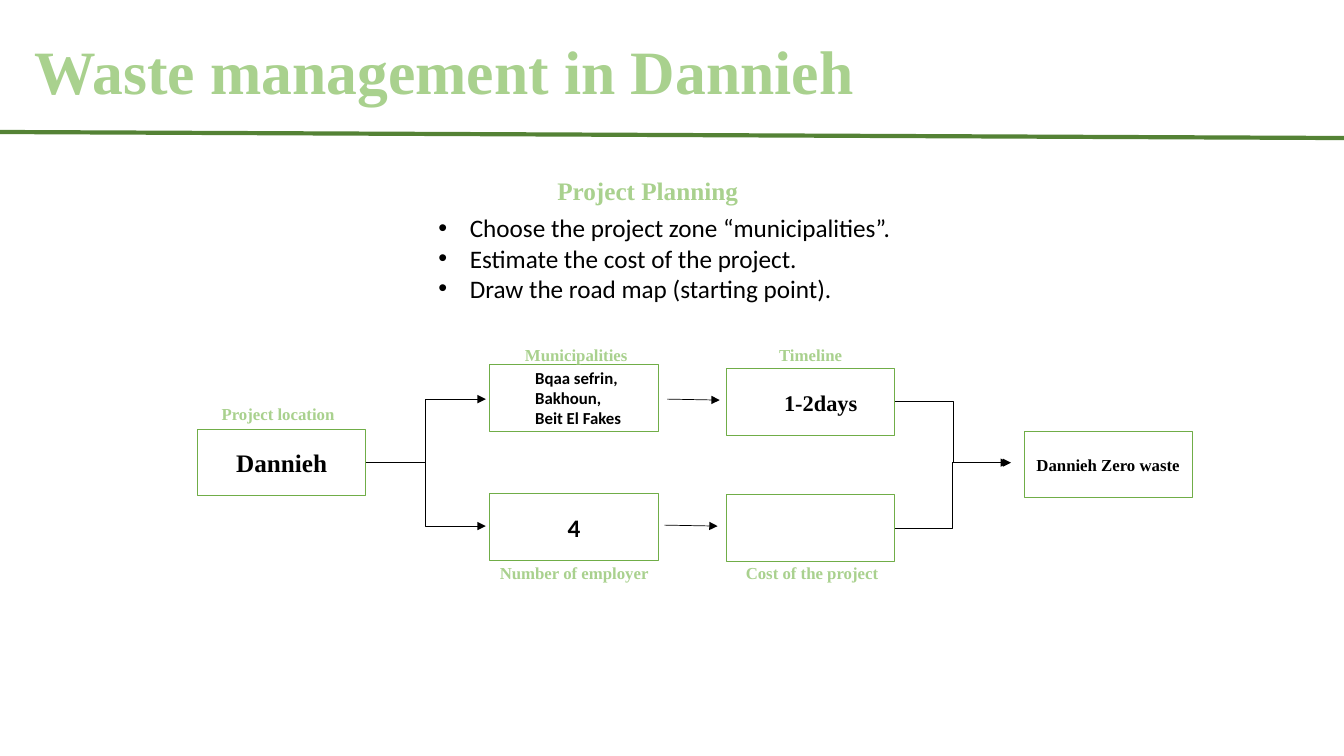
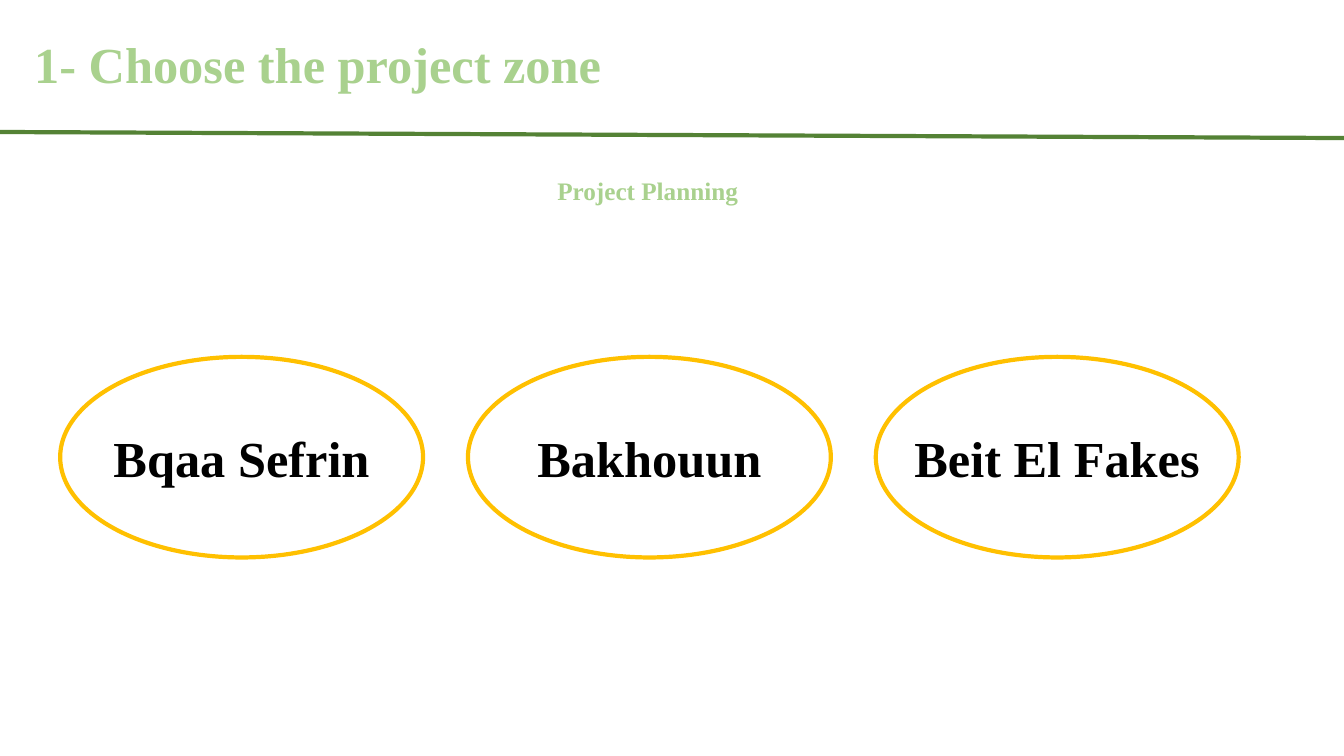
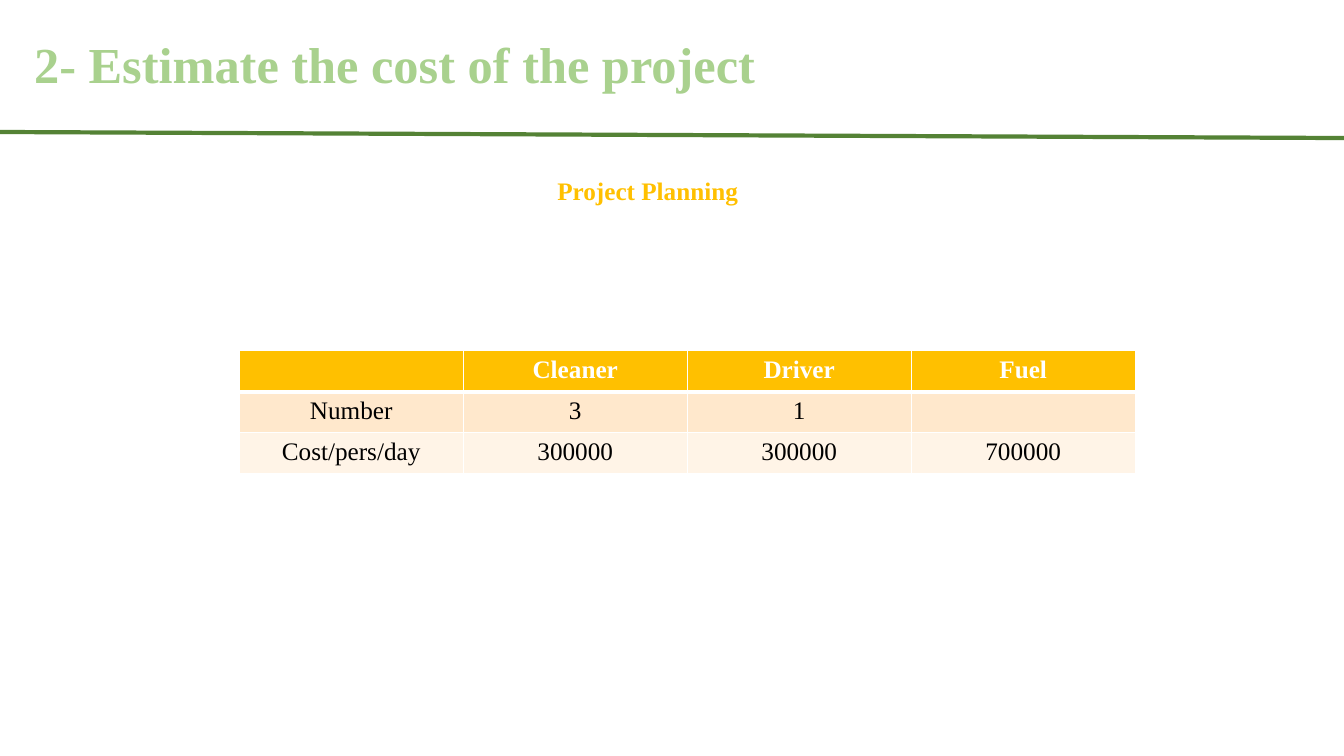
from lxml.etree import SubElement
from pptx import Presentation
from pptx.dml.color import RGBColor
from pptx.enum.shapes import MSO_CONNECTOR as CONNECTOR, MSO_SHAPE as SHAPE
from pptx.enum.text import MSO_ANCHOR as ANCHOR, PP_ALIGN as ALIGN
from pptx.oxml.ns import qn
from pptx.util import Pt

LIGHT_GREEN = RGBColor(0xA9, 0xD1, 0x8E)
GREEN = RGBColor(0x70, 0xAD, 0x47)
DARK_GREEN = RGBColor(0x54, 0x82, 0x35)
GOLD = RGBColor(0xFF, 0xC0, 0x00)
PEACH = RGBColor(0xFF, 0xE8, 0xCC)
CREAM = RGBColor(0xFF, 0xF4, 0xE7)
BLACK = RGBColor(0x00, 0x00, 0x00)
WHITE = RGBColor(0xFF, 0xFF, 0xFF)
SERIF, SANS = "Times New Roman", "Calibri"

HEADING = {"name": SERIF, "bold": True}
LABEL = {**HEADING, "size": Pt(12)}
BODY = {"name": SANS, "size": Pt(18)}


def add_text(slide, bounds, lines, font, color, outline=None, inset=None):
    """Add a text box, or with outline (preset, colour, weight) a hollow shape.

    Text in a hollow shape is centred unless a left inset is given.
    """
    bounds = [Pt(value) for value in bounds]
    if outline:
        preset, line_color, weight = outline
        shape = slide.shapes.add_shape(preset, *bounds)
        shape.shadow.inherit = False
        shape.fill.background()
        shape.line.color.rgb = line_color
        shape.line.width = Pt(weight)
    else:
        shape = slide.shapes.add_textbox(*bounds)
    frame = shape.text_frame
    centred = outline is not None and inset is None
    frame.word_wrap = not centred
    frame.vertical_anchor = ANCHOR.MIDDLE if outline else ANCHOR.TOP
    if inset is not None:
        frame.margin_left, frame.margin_right = Pt(inset), 0
    frame.text = "\n".join(lines)
    for paragraph in frame.paragraphs:
        paragraph.alignment = ALIGN.CENTER if centred else ALIGN.LEFT
        paragraph.font.color.rgb = color
        for name, value in font.items():
            setattr(paragraph.font, name, value)
    return shape


def add_line(slide, kind, start, end, color, weight, arrow=False):
    connector = slide.shapes.add_connector(kind, *[Pt(value) for value in start + end])
    connector.line.color.rgb = color
    connector.line.width = Pt(weight)
    if arrow:
        SubElement(connector.line._get_or_add_ln(), qn("a:tailEnd"), type="triangle")
    SubElement(connector._element.spPr, qn("a:effectLst"))


presentation = Presentation()
presentation.slide_width, presentation.slide_height = Pt(960), Pt(540)

# Title, rule and subtitle shared by every slide
slides = []
for title, title_size, subtitle_color in [
    ("Waste management in Dannieh", 44, LIGHT_GREEN),
    ("1- Choose the project zone", 36, LIGHT_GREEN),
    ("2- Estimate the cost of the project", 36, GOLD),
]:
    slide = presentation.slides.add_slide(presentation.slide_layouts[6])
    add_text(slide, (17.3, 20.2, 800, 60), [title],
             {**HEADING, "size": Pt(title_size)}, LIGHT_GREEN)
    add_line(slide, CONNECTOR.STRAIGHT, (0, 94.3), (960, 98.6), DARK_GREEN, 3)
    add_text(slide, (391, 121.7, 180, 29), ["Project Planning"],
             {**HEADING, "size": Pt(18)}, subtitle_color)
    slides.append(slide)
planning, zones, costs = slides

# Slide 1: steps and flow diagram
steps = add_text(planning, (306, 148.3, 348.5, 72.7), [
    "Choose the project zone “municipalities”.",
    "Estimate the cost of the project.",
    "Draw the road map (starting point).",
], BODY, BLACK)
for paragraph in steps.text_frame.paragraphs:
    properties = paragraph._p.get_or_add_pPr()
    properties.set("marL", str(Pt(22.5)))
    properties.set("indent", str(-Pt(22.5)))
    SubElement(properties, qn("a:buFont"), typeface="Arial")
    SubElement(properties, qn("a:buChar"), char="•")

for left, top, lines, font, inset in [
    (141.1, 306.7, ["Dannieh"], {**HEADING, "size": Pt(18)}, None),
    (349.9, 260.6, ["Bqaa sefrin,", "Bakhoun,", "Beit El Fakes"],
     {**LABEL, "name": SANS}, 32.4),
    (349.9, 352.8, ["4"], {**BODY, "bold": True}, None),
    (519.1, 263.5, ["1-2days"], {**HEADING, "size": Pt(16)}, 41),
    (519.1, 353.5, [], BODY, None),
    (731.5, 308.2, ["Dannieh Zero waste"], LABEL, None),
]:
    add_text(planning, (left, top, 120.2, 47.5), lines, font, BLACK,
             (SHAPE.RECTANGLE, GREEN, 0.75), inset)

for left, top, label in [
    (151.2, 285.1, "Project location"),
    (367.9, 242.6, "Municipalities"),
    (549.4, 242.6, "Timeline"),
    (349.9, 398.2, "Number of employer"),
    (525.6, 398.2, "Cost of the project"),
]:
    add_text(planning, (left, top, 140, 21.6), [label], LABEL, LIGHT_GREEN)

for kind, start, end in [
    (CONNECTOR.ELBOW, (261.4, 330.5), (347, 285.1)),
    (CONNECTOR.ELBOW, (261.4, 330.5), (347, 375.8)),
    (CONNECTOR.STRAIGHT, (476.6, 285.1), (514.1, 285.8)),
    (CONNECTOR.STRAIGHT, (474.5, 375.1), (512.6, 375.8)),
    (CONNECTOR.ELBOW, (639.4, 286.6), (722.2, 330.5)),
    (CONNECTOR.ELBOW, (639.4, 377.3), (720.7, 330.5)),
]:
    add_line(planning, kind, start, end, BLACK, 0.5, arrow=True)

# Slide 2: the three zones
for index, zone in enumerate(["Bqaa Sefrin", "Bakhouun", "Beit El Fakes"]):
    add_text(zones, (43 + index * 291.3, 254.9, 259.2, 143.3), [zone],
             {**HEADING, "size": Pt(36)}, BLACK, (SHAPE.OVAL, GOLD, 3))

# Slide 3: cost table
rows = [
    ("", "Cleaner", "Driver", "Fuel"),
    ("Number", "3", "1", ""),
    ("Cost/pers/day", "300000", "300000", "700000"),
]
row_fills = [GOLD, PEACH, CREAM]
table = costs.shapes.add_table(
    len(rows), len(rows[0]), Pt(170.9), Pt(250.6), Pt(640), Pt(87.6)).table
for row_index, (values, fill) in enumerate(zip(rows, row_fills)):
    is_header = row_index == 0
    border_widths = {
        "lnL": 1, "lnR": 1,
        "lnT": 3 if row_index == 1 else 1,
        "lnB": 3 if is_header else 1,
    }
    for column_index, value in enumerate(values):
        cell = table.cell(row_index, column_index)
        cell_properties = cell._tc.get_or_add_tcPr()
        for side, width in border_widths.items():
            border = SubElement(cell_properties, qn(f"a:{side}"), w=str(Pt(width)))
            border_fill = SubElement(border, qn("a:solidFill"))
            SubElement(border_fill, qn("a:srgbClr"), val=str(WHITE))
        cell.fill.solid()
        cell.fill.fore_color.rgb = fill
        cell.text = value
        paragraph = cell.text_frame.paragraphs[0]
        paragraph.alignment = ALIGN.CENTER
        paragraph.font.color.rgb = WHITE if is_header else BLACK
        cell_font = {"name": SERIF, "size": Pt(18), "bold": is_header}
        for name, setting in cell_font.items():
            setattr(paragraph.font, name, setting)

presentation.save("out.pptx")
